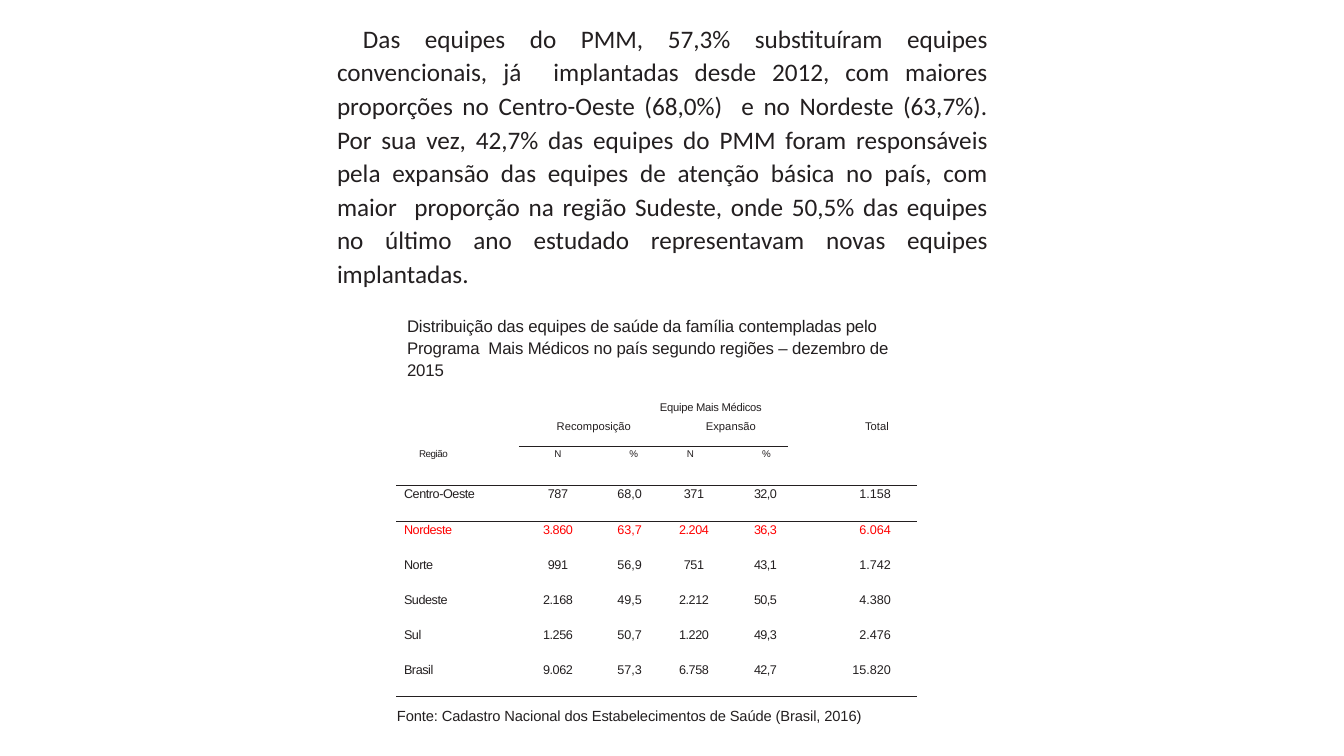
from pptx import Presentation
from pptx.dml.color import RGBColor
from pptx.enum.text import MSO_AUTO_SIZE, PP_ALIGN
from pptx.oxml.ns import qn
from pptx.util import Emu, Pt
from lxml import etree

LEFT, CENTER, RIGHT, JUSTIFY = PP_ALIGN.LEFT, PP_ALIGN.CENTER, PP_ALIGN.RIGHT, PP_ALIGN.JUSTIFY
FIT_SHAPE = MSO_AUTO_SIZE.SHAPE_TO_FIT_TEXT
INK, RED = "231F20", "FF0000"
NO_STYLE = "{2D5ABB26-0587-4C30-8999-92F81FD0307C}"


def px(count):
    return Emu(round(count * 914400 / 100.8))


def color(code):
    return RGBColor.from_string(code)


class SlideBuilder:
    def __init__(self, page):
        self.page = page
        self.ink = INK
        self.font = "Arial"

    def style(self, para, size, align=LEFT, left=0, right=0, indent=0,
              line=None, before=0, tracking=0, font=None, ink=None):
        """Format one paragraph; margins in px, sizes and tracking in points."""
        para.alignment = align
        para.space_before = Pt(before)
        if line:
            para.line_spacing = line
        properties = para._p.get_or_add_pPr()
        for name, length in (("marL", left), ("marR", right), ("indent", indent)):
            properties.set(name, str(px(length)))
        for span in para.runs:
            span.font.name = font or self.font
            span.font.size = Pt(size)
            span.font.color.rgb = color(ink or self.ink)
            span._r.get_or_add_rPr().set("spc", str(round(tracking * 100)))

    def text(self, left, top, width, height, paragraphs, margins=(10, 5, 10, 5)):
        """Add a text box; paragraphs are pairs of wording and style."""
        box = self.page.shapes.add_textbox(px(left), px(top), px(width), px(height))
        frame = box.text_frame
        frame.word_wrap = True
        frame.auto_size = FIT_SHAPE
        (frame.margin_left, frame.margin_top,
         frame.margin_right, frame.margin_bottom) = map(px, margins)
        frame.text = "\n".join(wording for wording, _ in paragraphs)
        for para, (_, look) in zip(frame.paragraphs, paragraphs):
            self.style(para, **look)

    def table(self, left, top, widths, heights):
        frame = self.page.shapes.add_table(len(heights), len(widths), px(left), px(top),
                                           px(sum(widths)), px(sum(heights)))
        grid = frame.table
        grid.first_row = grid.horz_banding = False
        grid._tbl.tblPr.find(qn("a:tableStyleId")).text = NO_STYLE
        for column, width in zip(grid.columns, widths):
            column.width = px(width)
        for row, height in zip(grid.rows, heights):
            row.height = px(height)
        return grid

    def cell(self, cell, wording, margin_top, rules, **look):
        """Fill one table cell and draw the rules named in order (lnT, lnB)."""
        cell.margin_left = cell.margin_right = cell.margin_bottom = 0
        cell.margin_top = px(margin_top)
        cell.text = wording
        self.style(cell.text_frame.paragraphs[0], **look)
        for side in rules:
            rule = etree.SubElement(cell._tc.get_or_add_tcPr(), qn("a:" + side), w=str(Pt(0.75)))
            fill = etree.SubElement(rule, qn("a:solidFill"))
            etree.SubElement(fill, qn("a:srgbClr"), val=self.ink)
        cell.fill.background()


BODY = ("Das equipes do PMM, 57,3% substituíram equipes convencionais, já  implantadas "
        "desde 2012, com maiores proporções no Centro-Oeste (68,0%)  e no Nordeste (63,7%). "
        "Por sua vez, 42,7% das equipes do PMM foram responsáveis pela expansão das equipes "
        "de atenção básica no país, com maior  proporção na região Sudeste, onde 50,5% das "
        "equipes no último ano estudado representavam novas equipes implantadas.")
CAPTION = ("Distribuição das equipes de saúde da família contempladas pelo Programa  Mais "
           "Médicos no país segundo regiões – dezembro de 2015")

# Each heading: wording, center, top, letter spacing
HEADINGS = [
    ("Equipe Mais Médicos", 711, 391, -0.2),
    ("Recomposição", 594, 410, 0),
    ("Expansão", 731, 410, 0),
    ("Total", 877, 410, 0),
]
HEADING_WIDTH, HEADING_HEIGHT = 140, 28

# Each column: width, alignment, tracking, (left, right) margins of heading and of values
COLUMNS = [
    (123, LEFT, -0.3, (23, 0), (8, 0)),
    (72, CENTER, -0.3, (6, 0), (6, 0)),
    (70, RIGHT, 0, (0, 23), (0, 19)),
    (79, CENTER, -0.3, (0, 20), (0, 13)),
    (48, CENTER, -0.4, (5, 0), (3, 0)),
    (129, RIGHT, 0, (0, 0), (0, 26)),
]
ROWS = [
    ("Região", "N", "%", "N", "%", ""),
    ("Centro-Oeste", "787", "68,0", "371", "32,0", "1.158"),
    ("Nordeste", "3.860", "63,7", "2.204", "36,3", "6.064"),
    ("Norte", "991", "56,9", "751", "43,1", "1.742"),
    ("Sudeste", "2.168", "49,5", "2.212", "50,5", "4.380"),
    ("Sul", "1.256", "50,7", "1.220", "49,3", "2.476"),
    ("Brasil", "9.062", "57,3", "6.758", "42,7", "15.820"),
]
HEIGHTS = [40, 36] + [35] * 5
RULED_ROWS = (0, 1, 6)


def main():
    deck = Presentation()
    deck.slide_width, deck.slide_height = px(1344), px(756)
    builder = SlideBuilder(deck.slides.add_slide(deck.slide_layouts[6]))

    # Main statement and table caption
    builder.text(326, 15, 672, 374, [
        (BODY, dict(size=18, font="Calibri", align=JUSTIFY, left=1, indent=26,
                    line=1.11, before=0.9)),
        (CAPTION, dict(size=12, left=71, right=82, line=1.07, before=19, tracking=-0.1)),
    ])

    # Table of teams by region
    grid = builder.table(396, 446, [column[0] for column in COLUMNS], HEIGHTS)
    for r, row in enumerate(ROWS):
        heading = r == 0
        for c, (_, align, tracking, head_margins, value_margins) in enumerate(COLUMNS):
            left, right = head_margins if heading else value_margins
            rules = ["lnT"] if heading and 1 <= c <= 4 else []
            if r in RULED_ROWS:
                rules.append("lnB")
            builder.cell(grid.cell(r, c), row[c], 3 if heading else 1, rules,
                         size=7 if heading else 9, align=align, left=left, right=right,
                         before=2 if heading else 1,
                         tracking=0 if heading and c else tracking,
                         ink=RED if row[0] == "Nordeste" else INK)

    # Group headings above the table, each centered over its columns
    for wording, center, top, tracking in HEADINGS:
        builder.text(center - HEADING_WIDTH // 2, top, HEADING_WIDTH, HEADING_HEIGHT, [
            (wording, dict(size=8, align=CENTER, line=1.33, before=1, tracking=tracking)),
        ])

    # Source line
    builder.text(396, 705, 586, 19, [
        ("Fonte: Cadastro Nacional dos Estabelecimentos de Saúde (Brasil, 2016)",
         dict(size=10.5, left=1, before=1.2, tracking=-0.05)),
    ], margins=(0, 2, 0, 0))

    deck.save("out.pptx")


if __name__ == "__main__":
    main()
